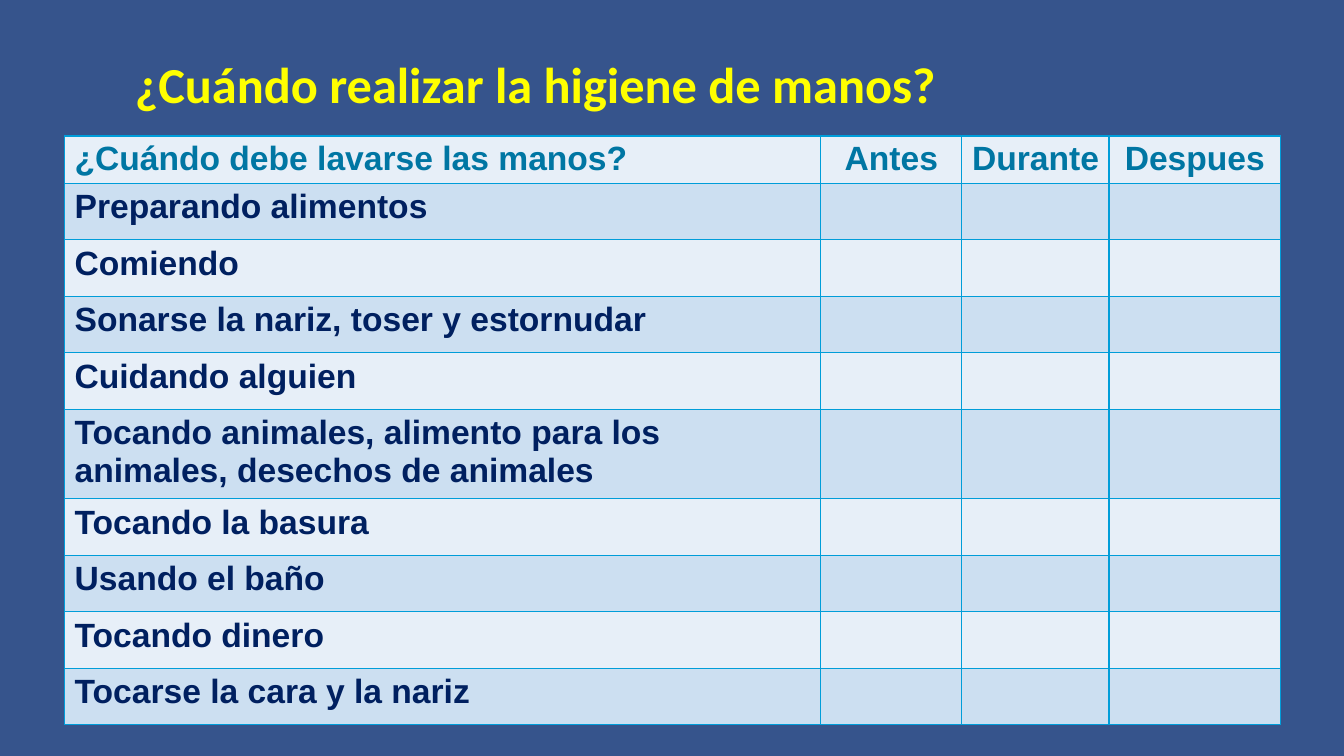
"""Build a slide with a hand hygiene checklist table."""
from lxml import etree
from pptx import Presentation
from pptx.dml.color import RGBColor
from pptx.enum import text
from pptx.oxml import ns
from pptx.util import Inches, Pt

TITLE = "¿Cuándo realizar la higiene de manos?"
HEADS = ["¿Cuándo debe lavarse las manos?", "Antes", "Durante", "Despues"]
TASKS = [
    "Preparando alimentos",
    "Comiendo",
    "Sonarse la nariz, toser y estornudar",
    "Cuidando alguien",
    "Tocando animales, alimento para los animales, desechos de animales",
    "Tocando la basura",
    "Usando el baño",
    "Tocando dinero",
    "Tocarse la cara y la nariz",
]
WIDTHS = [7.5, 1.4, 1.46, 1.7]
HEAD_H, ROW_H, TALL_H = 0.47, 0.56, 0.89
TALL = 5
COLORS = {"back": "36548C", "title": "FFFF00", "head": "0076A3", "task": "002060",
          "light": "E7EFF8", "dark": "CCDFF1", "edge": "009DD9"}


def color(name):
    return RGBColor.from_string(COLORS[name])


def write(para, words, font, size, tint):
    run = para.add_run()
    run.text = words
    run.font.name, run.font.size, run.font.bold = font, Pt(size), True
    run.font.color.rgb = color(tint)


def add_edges(cell):
    props = cell._tc.get_or_add_tcPr()
    for place, side in enumerate(("lnL", "lnR", "lnT", "lnB")):
        line = etree.Element(ns.qn("a:" + side), w=str(Pt(1)))
        fill = etree.SubElement(line, ns.qn("a:solidFill"))
        etree.SubElement(fill, ns.qn("a:srgbClr"), val=COLORS["edge"])
        props.insert(place, line)


def add_title(slide):
    box = slide.shapes.add_textbox(Inches(1.24), Inches(0.48), Inches(10.53), Inches(0.71))
    frame = box.text_frame
    frame.word_wrap = True
    frame.auto_size = text.MSO_AUTO_SIZE.SHAPE_TO_FIT_TEXT
    write(frame.paragraphs[0], TITLE, "Calibri", 36, "title")


def add_checks(slide):
    rows = [HEADS] + [[task, "", "", ""] for task in TASKS]
    highs = [HEAD_H] + [ROW_H] * len(TASKS)
    highs[TALL] = TALL_H
    table = slide.shapes.add_table(
        len(rows), len(WIDTHS), Inches(0.64), Inches(1.35),
        Inches(sum(WIDTHS)), Inches(sum(highs))).table
    for col, width in zip(table.columns, WIDTHS):
        col.width = Inches(width)
    for r, (row, high) in enumerate(zip(rows, highs)):
        table.rows[r].height = Inches(high)
        for c, words in enumerate(row):
            cell = table.cell(r, c)
            cell.fill.solid()
            cell.fill.fore_color.rgb = color("dark" if r % 2 else "light")
            add_edges(cell)
            if r == 0:
                cell.margin_top = cell.margin_bottom = Inches(0.04)
            if words:
                para = cell.text_frame.paragraphs[0]
                para.alignment = text.PP_ALIGN.CENTER if c else text.PP_ALIGN.LEFT
                write(para, words, "Arial", 24, "task" if r else "head")


def main():
    deck = Presentation()
    deck.slide_width, deck.slide_height = Inches(13.33), Inches(7.5)
    slide = deck.slides.add_slide(deck.slide_layouts[6])
    slide.background.fill.solid()
    slide.background.fill.fore_color.rgb = color("back")
    add_checks(slide)
    add_title(slide)
    deck.save("out.pptx")


if __name__ == "__main__":
    main()
